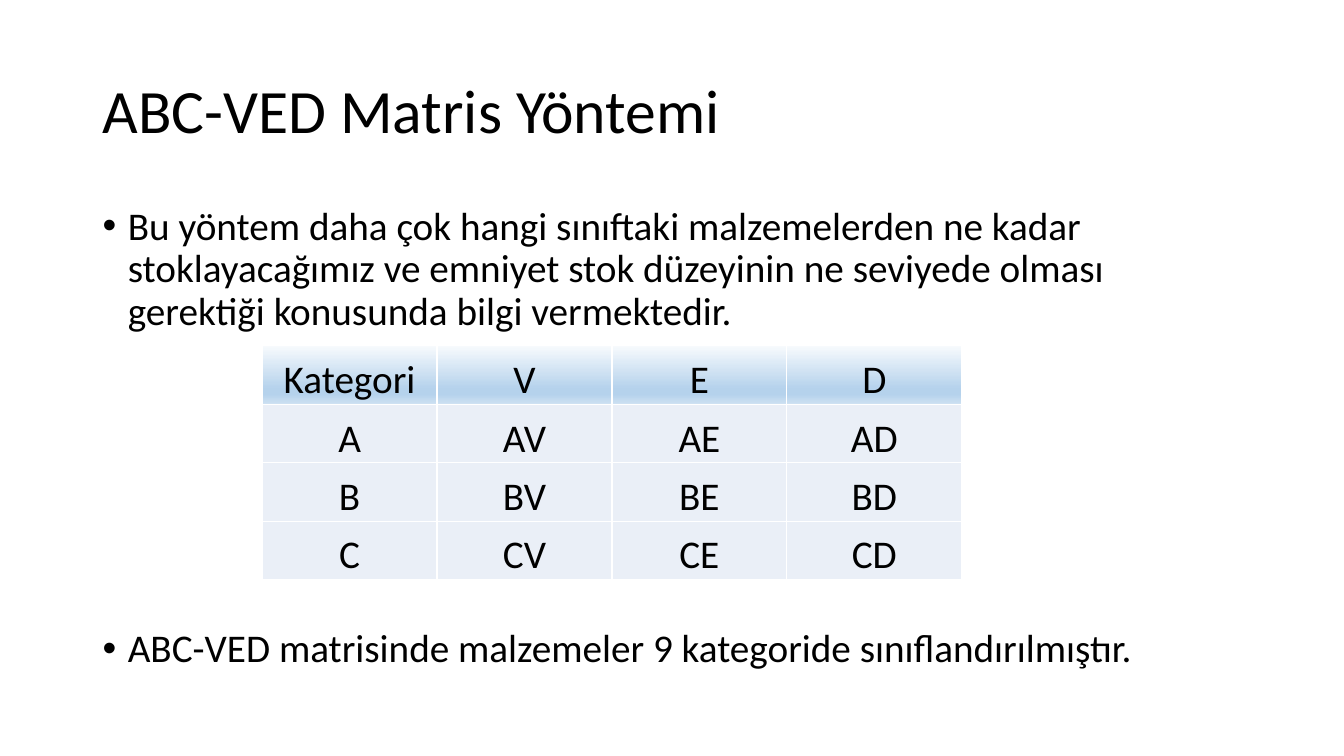
"""Build the ABC-VED matrix slide: title, two bullets and a category table."""
from lxml.etree import SubElement
from pptx import Presentation
from pptx.dml.color import RGBColor
from pptx.enum.text import MSO_ANCHOR as Anchor, PP_ALIGN as Align
from pptx.oxml.ns import qn
from pptx.util import Inches, Pt

BLACK = RGBColor(0x00, 0x00, 0x00)
WHITE = RGBColor(0xFF, 0xFF, 0xFF)
PALE_BLUE = RGBColor(0xEA, 0xEF, 0xF7)
HEADER_STOPS = [
    (0, RGBColor(0xF7, 0xFA, 0xFD)),
    (74, RGBColor(0xB5, 0xD2, 0xEC)),
    (83, RGBColor(0xB5, 0xD2, 0xEC)),
    (100, RGBColor(0xCE, 0xE1, 0xF2)),
]
MARGIN, CONTENT_WIDTH = Inches(0.92), Inches(11.5)
COLUMN, ROW = Inches(1.735), Inches(0.58)
CLASSES, PRIORITIES = "ABC", "VED"


def style(paragraph, size):
    paragraph.font.name = "Calibri"
    paragraph.font.size = Pt(size)
    paragraph.font.color.rgb = BLACK


def add_text(top, height, anchor, size, lines):
    box = slide.shapes.add_textbox(MARGIN, Inches(top), CONTENT_WIDTH, Inches(height))
    frame = box.text_frame
    frame.word_wrap = True
    frame.vertical_anchor = anchor
    frame.text = "\n".join(lines)
    for paragraph in frame.paragraphs:
        style(paragraph, size)
        paragraph.line_spacing = 0.9
    return frame.paragraphs


deck = Presentation()
deck.slide_width, deck.slide_height = Inches(13.33), Inches(7.5)
slide = deck.slides.add_slide(deck.slide_layouts[6])

add_text(0.4, 1.45, Anchor.MIDDLE, 44, ["ABC-VED Matris Yöntemi"])

bullets = add_text(2, 4.76, Anchor.TOP, 28, [
    "Bu yöntem daha çok hangi sınıftaki malzemelerden ne kadar stoklayacağımız "
    "ve emniyet stok düzeyinin ne seviyede olması gerektiği konusunda bilgi vermektedir.",
    "ABC-VED matrisinde malzemeler 9 kategoride sınıflandırılmıştır.",
])
for bullet, space_before in zip(bullets, (10, 211)):
    bullet.space_before = Pt(space_before)
    properties = bullet._p.get_or_add_pPr()
    properties.set("marL", str(Inches(0.25)))
    properties.set("indent", str(-Inches(0.25)))
    SubElement(properties, qn("a:buFont"), typeface="Arial")
    SubElement(properties, qn("a:buChar"), char="•")
    properties.append(properties.find(qn("a:defRPr")))

matrix_rows = [["Kategori", *PRIORITIES]]
matrix_rows += [[group, *(group + priority for priority in PRIORITIES)] for group in CLASSES]
row_count, column_count = len(matrix_rows), len(matrix_rows[0])
matrix = slide.shapes.add_table(
    row_count, column_count, Inches(2.6), Inches(3.43), COLUMN * column_count, ROW * row_count
).table
matrix.first_row = matrix.horz_banding = False

for row, labels in enumerate(matrix_rows):
    for column, label in enumerate(labels):
        cell = matrix.cell(row, column)
        cell.text = label
        cell.vertical_anchor = Anchor.BOTTOM
        cell.margin_left = cell.margin_right = cell.margin_top = Inches(0.01)
        cell.margin_bottom = 0
        paragraph = cell.text_frame.paragraphs[0]
        paragraph.alignment = Align.CENTER
        style(paragraph, 28)

        properties = cell._tc.get_or_add_tcPr()
        for side in ("lnL", "lnR", "lnT", "lnB"):
            border = SubElement(properties, qn(f"a:{side}"), w=str(Pt(1)))
            SubElement(SubElement(border, qn("a:solidFill")), qn("a:srgbClr"), val=str(WHITE))
        if row:
            cell.fill.solid()
            cell.fill.fore_color.rgb = PALE_BLUE
        else:
            gradient = SubElement(properties, qn("a:gradFill"), rotWithShape="1")
            stops = SubElement(gradient, qn("a:gsLst"))
            for percent, color in HEADER_STOPS:
                stop = SubElement(stops, qn("a:gs"), pos=str(percent * 1000))
                SubElement(stop, qn("a:srgbClr"), val=str(color))
            SubElement(gradient, qn("a:lin"), ang=str(90 * 60000), scaled="0")

deck.save("out.pptx")
